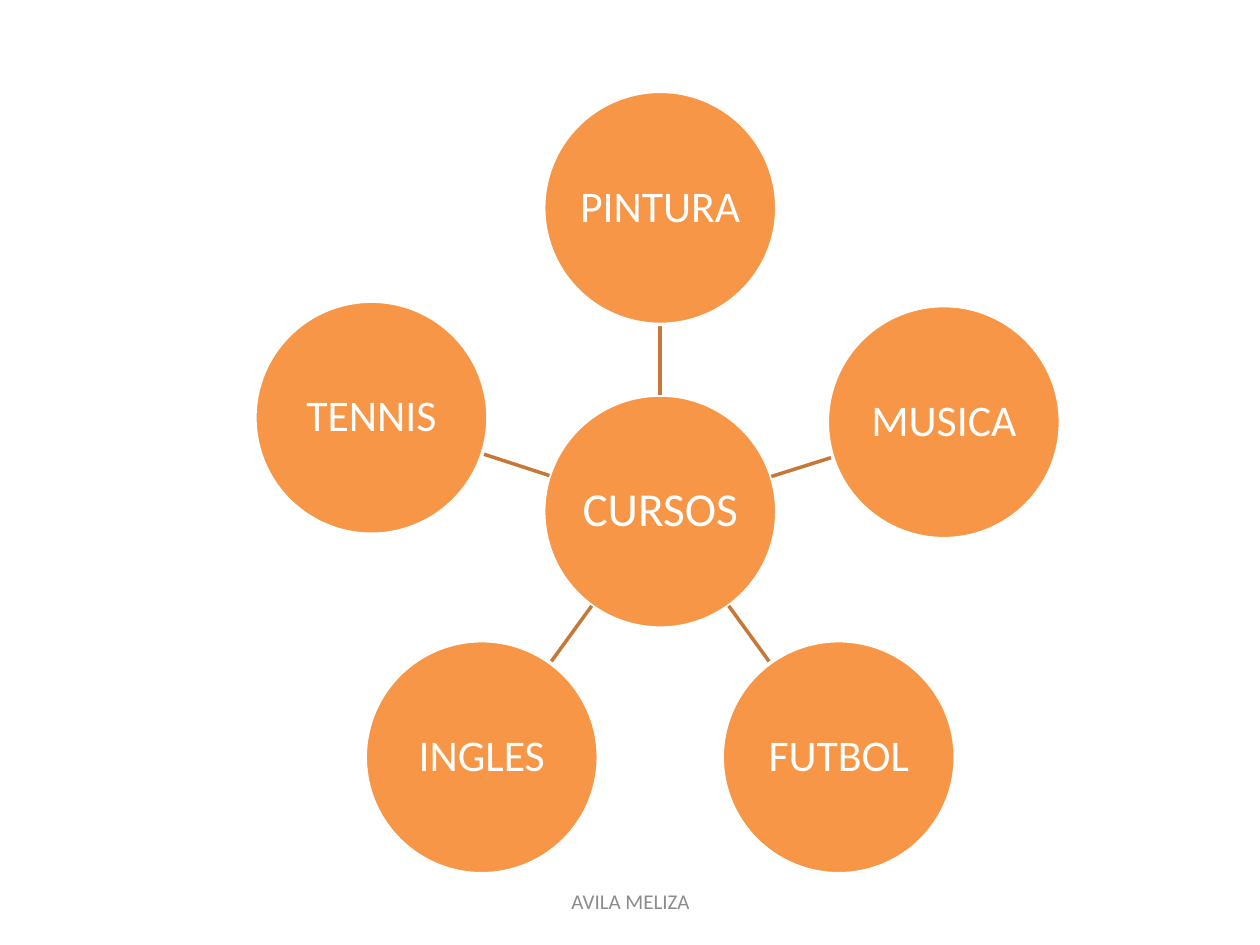
import math

import pptx
import pptx.dml.color
import pptx.enum.shapes
import pptx.enum.text
import pptx.oxml.ns
import pptx.util
from pptx.util import Inches

RGB = pptx.dml.color.RGBColor
ORANGE = RGB(0xF7, 0x96, 0x46)
BROWN = RGB(0xC6, 0x78, 0x38)
WHITE = RGB(0xFF, 0xFF, 0xFF)
GRAY = RGB(0x8C, 0x8C, 0x8C)

FONT = "Calibri"
HUB = (5.24, 4.06)
SIZE = 1.85
COURSES = [
    ("PINTURA", -90, 2.41),
    ("MUSICA", -17.5, 2.36),
    ("FUTBOL", 54, 2.41),
    ("INGLES", 126, 2.41),
    ("TENNIS", 198, 2.41),
]


def polar(angle, dist):
    """Return the point at an angle and distance from the hub."""
    turn = math.radians(angle)
    return HUB[0] + dist * math.cos(turn), HUB[1] + dist * math.sin(turn)


def write(frame, text, size, color):
    """Put one centred line of text in a frame."""
    frame.word_wrap = True
    frame.vertical_anchor = pptx.enum.text.MSO_ANCHOR.MIDDLE
    para = frame.paragraphs[0]
    para.text = text
    para.alignment = pptx.enum.text.PP_ALIGN.CENTER
    para.font.name = FONT
    para.font.size = pptx.util.Pt(size)
    para.font.color.rgb = color
    return para


def add_disc(slide, text, center, size):
    """Draw a labelled circle around its center."""
    left, top = (value - SIZE / 2 for value in center)
    oval = pptx.enum.shapes.MSO_SHAPE.OVAL
    disc = slide.shapes.add_shape(
        oval, Inches(left), Inches(top), Inches(SIZE), Inches(SIZE))
    disc.shadow.inherit = False
    disc.fill.solid()
    disc.fill.fore_color.rgb = ORANGE
    disc.line.color.rgb = WHITE
    disc.line.width = pptx.util.Pt(2)
    frame = disc.text_frame
    frame.margin_left = frame.margin_right = 0
    frame.margin_top = frame.margin_bottom = 0
    write(frame, text, size, WHITE).line_spacing = 0.9


def add_spoke(slide, angle, dist):
    """Draw the line between the hub and a course."""
    start = polar(angle, SIZE / 2)
    end = polar(angle, dist - SIZE / 2)
    kind = pptx.enum.shapes.MSO_CONNECTOR.STRAIGHT
    spoke = slide.shapes.add_connector(kind, *map(Inches, start + end))
    spoke.line.color.rgb = BROWN
    spoke.line.width = pptx.util.Pt(2)
    props = spoke._element.spPr
    props.append(props.makeelement(pptx.oxml.ns.qn("a:effectLst"), {}))


def add_footer(slide, text):
    """Write the footer line."""
    box = slide.shapes.add_textbox(
        Inches(3.42), Inches(6.95), Inches(3.17), Inches(0.4))
    write(box.text_frame, text, 12, GRAY)


def main():
    """Build the slide and save it."""
    deck = pptx.Presentation()
    deck.slide_width = Inches(10)
    deck.slide_height = Inches(7.5)
    slide = deck.slides.add_slide(deck.slide_layouts[6])
    add_disc(slide, "CURSOS", HUB, 27)
    for name, angle, dist in COURSES:
        add_spoke(slide, angle, dist)
        add_disc(slide, name, polar(angle, dist), 25)
    add_footer(slide, "AVILA MELIZA")
    deck.save("out.pptx")


if __name__ == "__main__":
    main()
